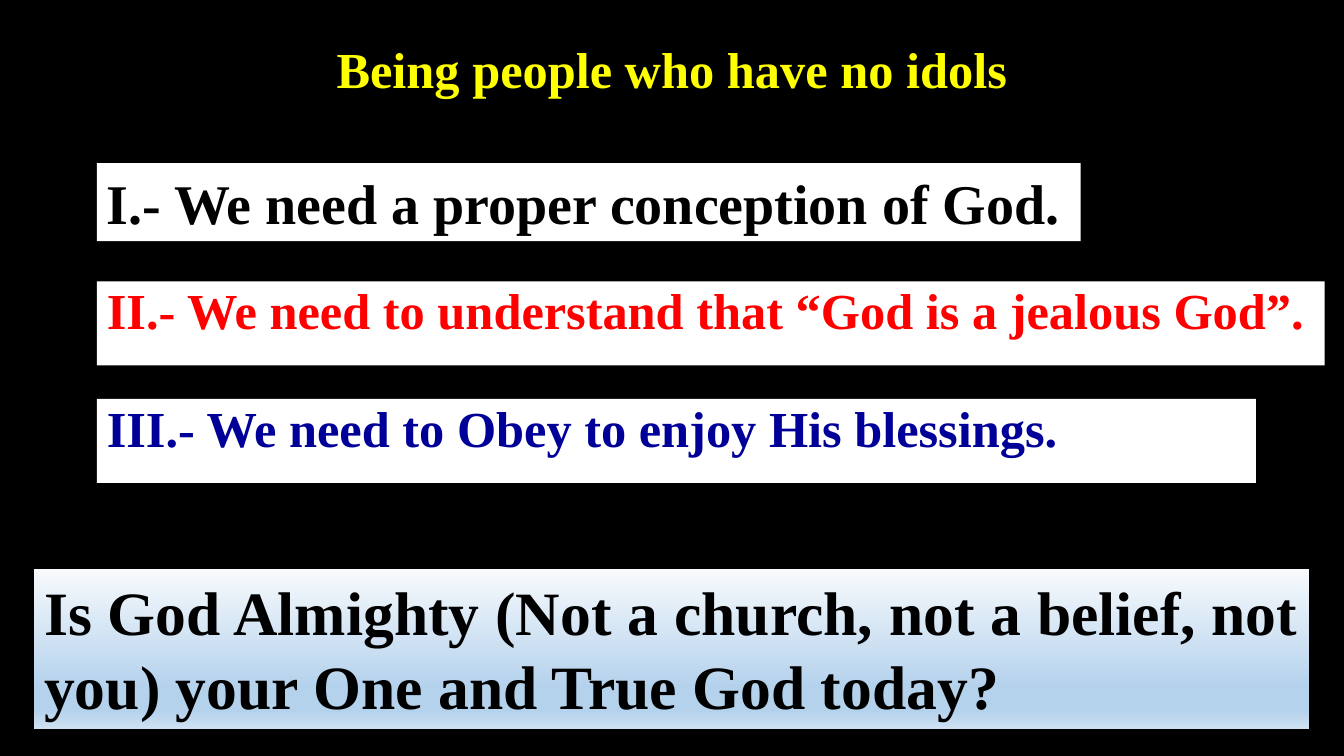
from copy import deepcopy

from pptx import Presentation
from pptx.dml.color import RGBColor
from pptx.enum.shapes import MSO_SHAPE as Shape
from pptx.enum.text import MSO_ANCHOR as Anchor, MSO_AUTO_SIZE as AutoSize, PP_ALIGN as Align
from pptx.oxml.ns import qn
from pptx.util import Pt

BLACK = RGBColor(0x00, 0x00, 0x00)
WHITE = RGBColor(0xFF, 0xFF, 0xFF)
YELLOW = RGBColor(0xFF, 0xFF, 0x00)
RED = RGBColor(0xFF, 0x00, 0x00)
NAVY = RGBColor(0x00, 0x00, 0x99)
PALE_BLUE = RGBColor(0xF7, 0xFA, 0xFD)
SKY_BLUE = RGBColor(0xB5, 0xD2, 0xEC)
LIGHT_BLUE = RGBColor(0xCE, 0xE1, 0xF2)


def write(box, text, size, color, frame_format, para_format):
    """Put one bold paragraph into a box."""
    frame = box.text_frame
    for name, value in frame_format.items():
        setattr(frame, name, value)
    para = frame.paragraphs[0]
    for name, value in para_format.items():
        setattr(para, name, value)
    span = para.add_run()
    span.text = text
    font_format = {"name": "Times New Roman", "size": Pt(size), "bold": True}
    for name, value in font_format.items():
        setattr(span.font, name, value)
    span.font.color.rgb = color


def add_panel(page, left, top, width, height):
    box = page.shapes.add_shape(Shape.RECTANGLE, Pt(left), Pt(top), Pt(width), Pt(height))
    box.shadow.inherit = False
    box.line.fill.background()
    box.fill.solid()
    box.fill.fore_color.rgb = WHITE
    return box


deck = Presentation()
deck.slide_width, deck.slide_height = Pt(960), Pt(540)
page = deck.slides.add_slide(deck.slide_layouts[6])
page.background.fill.solid()
page.background.fill.fore_color.rgb = BLACK

# Title
title = page.shapes.add_textbox(Pt(66), Pt(-1), Pt(828), Pt(104.4))
write(title, "Being people who have no idols", 36, YELLOW,
      {"word_wrap": True, "vertical_anchor": Anchor.MIDDLE},
      {"alignment": Align.CENTER, "line_spacing": 0.9})

# Three points
wrapped = {"word_wrap": True, "vertical_anchor": Anchor.TOP}
one_line = {"word_wrap": False, "vertical_anchor": Anchor.TOP,
            "auto_size": AutoSize.SHAPE_TO_FIT_TEXT}
plain = {"alignment": Align.LEFT}
spaced = {"alignment": Align.LEFT, "line_spacing": 0.9, "space_before": Pt(10)}
points = [
    ("I.- We need a proper conception of God.", 116.6, 702.7, 55.7, 40, BLACK, one_line, plain),
    ("II.- We need to understand that “God is a jealous God”.",
     201, 877, 60, 36, RED, wrapped, spaced),
    ("III.- We need to Obey to enjoy His blessings.", 285, 828, 60, 36, NAVY, wrapped, spaced),
]
for text, top, width, height, size, color, frame_format, para_format in points:
    panel = add_panel(page, 69.2, top, width, height)
    write(panel, text, size, color, frame_format, para_format)

# Closing question on a four-stop gradient
question = add_panel(page, 24.5, 406.6, 910.6, 113.8)
question.fill.gradient()
question.fill.gradient_angle = 270
stop_list = question.fill._xPr.find(".//" + qn("a:gsLst"))
for stop in list(stop_list):
    stop_list.append(deepcopy(stop))
shades = [(0, PALE_BLUE), (0.74, SKY_BLUE), (0.89, SKY_BLUE), (1, LIGHT_BLUE)]
for stop, (position, color) in zip(question.fill.gradient_stops, shades):
    stop.position = position
    stop.color.rgb = color
write(question,
      "Is God Almighty (Not a church, not a belief, not you) your One and True God today?",
      44, BLACK, {**wrapped, "auto_size": AutoSize.SHAPE_TO_FIT_TEXT},
      {"alignment": Align.JUSTIFY})

deck.save("out.pptx")
